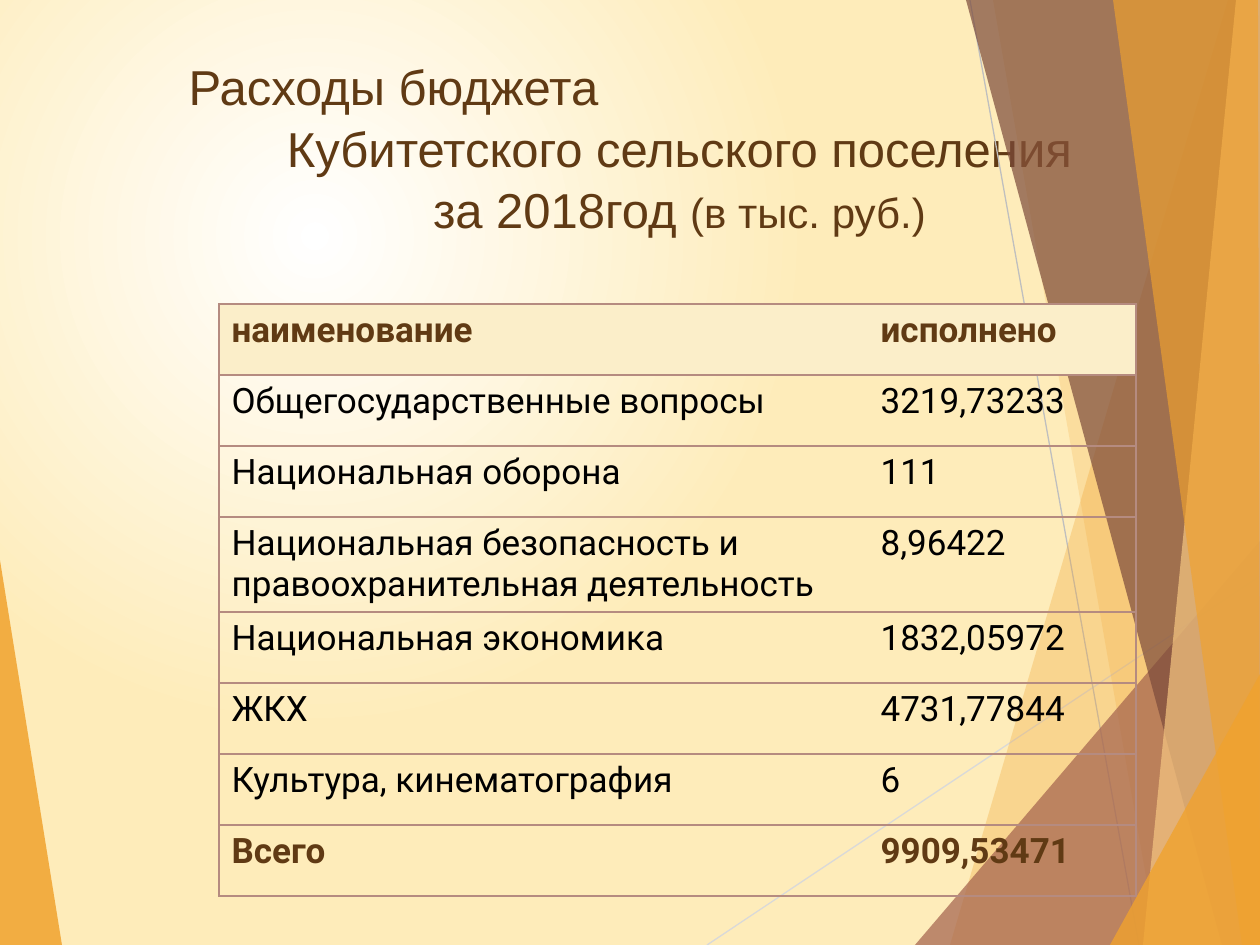
import pptx
import pptx.dml.color
import pptx.enum.text
import pptx.oxml.ns
import pptx.util
from lxml import etree

PX = 914400 / 126
WIDTH, HEIGHT = 1260, 945
COLOURS = {
    "white": "FFFFFF", "cream": "FEECBA", "orange": "F0A22E", "rust": "A5644E",
    "brown": "7C4B3B", "sand": "F6C782", "line": "D9D9D9", "dark line": "BFBFBF",
    "text": "603A14", "black": "000000", "header": "FBEEC9", "border": "B58B80",
}
qn = pptx.oxml.ns.qn


def emu(*lengths):
    """Turn px into EMU."""
    return [pptx.util.Emu(round(length * PX)) for length in lengths]


def rgb(name):
    return pptx.dml.color.RGBColor.from_string(COLOURS[name])


deck = pptx.Presentation()
deck.slide_width, deck.slide_height = emu(WIDTH, HEIGHT)
page = deck.slides.add_slide(deck.slide_layouts[5])

# Background: a circular glow centred in the upper left quarter
glow = page.background.fill
glow.gradient()
for stop, colour, position in zip(glow.gradient_stops, ("white", "cream"), (0, 0.63)):
    stop.color.rgb = rgb(colour)
    stop.position = position
gradient = page.element.find(".//" + qn("a:gradFill"))
gradient.remove(gradient.find(qn("a:lin")))
circle = etree.SubElement(gradient, qn("a:path"), path="circle")
etree.SubElement(circle, qn("a:fillToRect"), l="50000", t="50000", r="100000", b="100000")

# Decoration: thin lines and translucent facets, from back to front
left_facet = ("orange", 85, [(0, 560), (62, HEIGHT), (0, HEIGHT)])
thin_lines = [("line", (707, HEIGHT, WIDTH, 576)), ("dark line", (970, 0, 1139, HEIGHT))]
right_facets = [
    ("orange", 30, [(1228, 0), (950, HEIGHT), (WIDTH, HEIGHT), (WIDTH, 0)]),
    ("orange", 20, [(993, 0), (1158, HEIGHT), (WIDTH, HEIGHT), (WIDTH, 0)]),
    ("rust", 72, [(915, HEIGHT), (WIDTH, 541), (WIDTH, HEIGHT)]),
    ("brown", 70, [(966, 0), (1222, HEIGHT), (WIDTH, HEIGHT), (WIDTH, 0)]),
    ("sand", 70, [(1236, 0), (1143, HEIGHT), (WIDTH, HEIGHT), (WIDTH, 0)]),
    ("orange", 65, [(1113, 0), (1242, HEIGHT), (WIDTH, HEIGHT), (1258, 0)]),
    ("orange", 80, [(1110, HEIGHT), (WIDTH, 674), (WIDTH, HEIGHT)]),
]

for colour, ends in thin_lines:
    line = page.shapes.add_connector(1, *emu(*ends))
    line.line.color.rgb = rgb(colour)
    line.line.width = pptx.util.Pt(0.75)
    etree.SubElement(line.element.spPr, qn("a:effectLst"))

for colour, opacity, corners in [left_facet] + right_facets:
    outline = page.shapes.build_freeform(*corners[0], scale=PX)
    outline.add_line_segments(corners[1:], close=True)
    facet = outline.convert_to_shape()
    facet.shadow.inherit = False
    facet.line.fill.background()
    facet.fill.solid()
    facet.fill.fore_color.rgb = rgb(colour)
    tint = facet.element.spPr.find(".//" + qn("a:srgbClr"))
    etree.SubElement(tint, qn("a:alpha"), val=str(opacity * 1000))

# Title
title = page.shapes.title
title.left, title.top, title.width, title.height = emu(64, 37, 1133, 208)
frame = title.text_frame
frame.word_wrap = True
frame.auto_size = pptx.enum.text.MSO_AUTO_SIZE.NONE
frame.vertical_anchor = pptx.enum.text.MSO_ANCHOR.BOTTOM
align = pptx.enum.text.PP_ALIGN
title_lines = [
    (align.LEFT, {"marL": 112}, [("Расходы бюджета", 28)]),
    (align.CENTER, {"marR": 14}, [("Кубитетского сельского поселения", 28)]),
    (align.CENTER, {}, [("за 2018год ", 28), ("(в тыс. руб.)", 24)]),
]
for index, (alignment, margins, spans) in enumerate(title_lines):
    para = frame.paragraphs[0] if index == 0 else frame.add_paragraph()
    para.alignment = alignment
    para.line_spacing = 1.05
    para.space_before = pptx.util.Pt(0)
    for side, length in margins.items():
        para._p.get_or_add_pPr().set(side, str(emu(length)[0]))
    for text, size in spans:
        span = para.add_run()
        span.text = text
        span.font.color.rgb = rgb("text")
        for name, value in {"name": "Arial", "size": pptx.util.Pt(size)}.items():
            setattr(span.font, name, value)

# Table of expenses
expenses = [
    ("наименование", "исполнено"),
    ("Общегосударственные вопросы", "3219,73233"),
    ("Национальная оборона", "111"),
    ("Национальная безопасность и правоохранительная деятельность", "8,96422"),
    ("Национальная экономика", "1832,05972"),
    ("ЖКХ", "4731,77844"),
    ("Культура, кинематография", "6"),
    ("Всего", "9909,53471"),
]
TALL_ROW = 3
row_heights = [94 if index == TALL_ROW else 71 for index in range(len(expenses))]
column_widths = [649, 268]
holder = page.shapes.add_table(
    len(expenses), 2, *emu(219, 304, sum(column_widths), sum(row_heights)))
table = holder.table
table.first_row = table.horz_banding = False
NO_STYLE = "{2D5ABB26-0587-4C30-8999-92F81FD0307C}"
table._tbl.tblPr.find(qn("a:tableStyleId")).text = NO_STYLE
for column, width in zip(table.columns, emu(*column_widths)):
    column.width = width
for row, height in zip(table.rows, emu(*row_heights)):
    row.height = height

for row_index, values in enumerate(expenses):
    is_header = row_index == 0
    is_bold = is_header or row_index == len(expenses) - 1
    for column_index, value in enumerate(values):
        cell = table.cell(row_index, column_index)
        properties = cell._tc.get_or_add_tcPr()
        outer_side = "lnR" if column_index else "lnL"
        for side in (outer_side, "lnT", "lnB"):
            border = etree.SubElement(properties, qn("a:" + side), w="12700")
            paint = etree.SubElement(border, qn("a:solidFill"))
            etree.SubElement(paint, qn("a:srgbClr"), val=COLOURS["border"])
        if is_header:
            cell.fill.solid()
            cell.fill.fore_color.rgb = rgb("header")
        else:
            cell.fill.background()
        span = cell.text_frame.paragraphs[0].add_run()
        span.text = value
        span.font.color.rgb = rgb("text" if is_bold else "black")
        look = {"name": "Roboto", "size": pptx.util.Pt(20), "bold": is_bold}
        for name, setting in look.items():
            setattr(span.font, name, setting)

deck.save("out.pptx")
